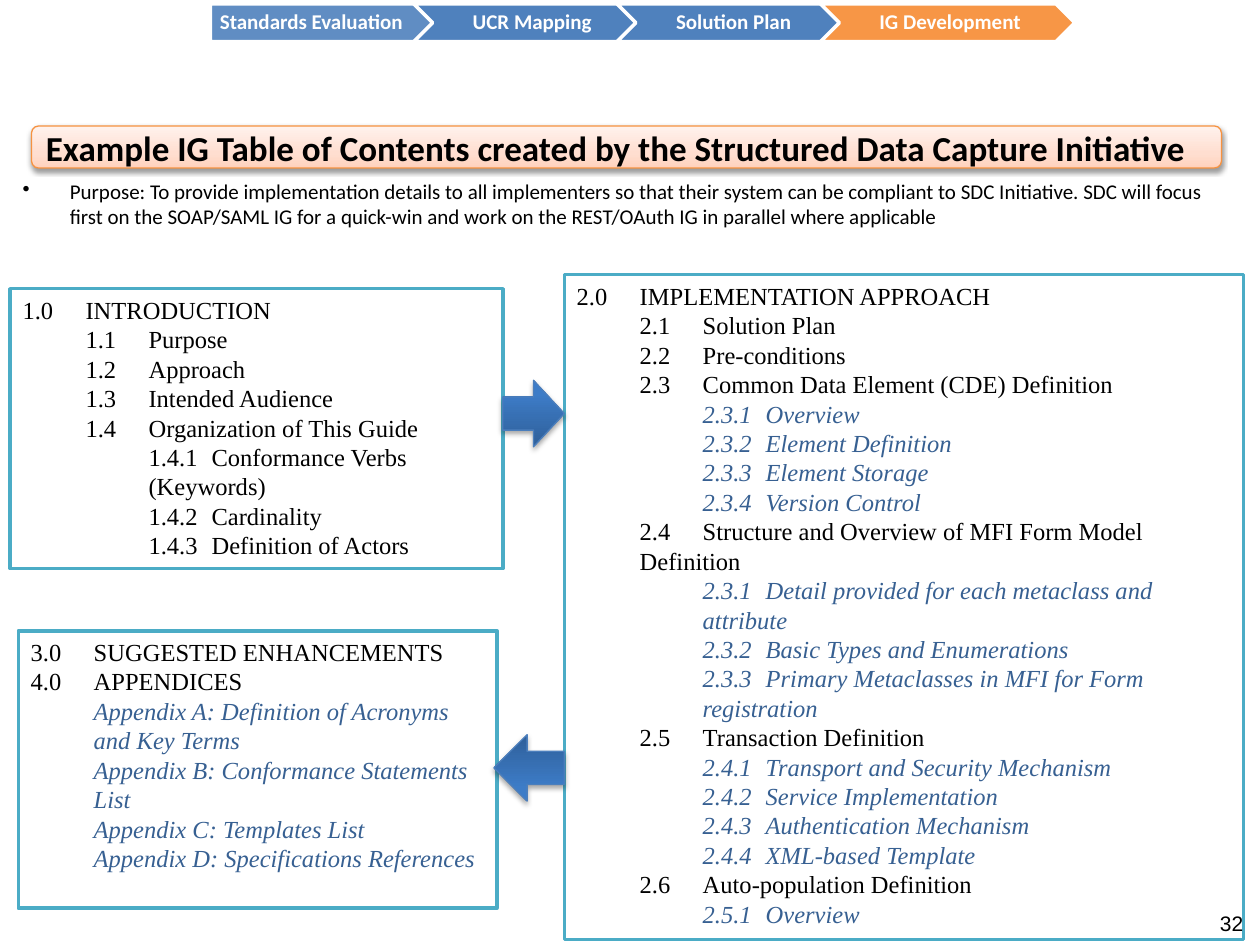
import pptx
import pptx.dml.color
import pptx.enum.shapes
import pptx.enum.text
import pptx.oxml
import pptx.oxml.ns
import pptx.util

Pt = pptx.util.Pt
SHAPES = pptx.enum.shapes.MSO_SHAPE
ANCHOR = pptx.enum.text.MSO_ANCHOR
COLORS = {
    "text": "000000", "light": "FFFFFF", "detail": "376092", "frame": "4BACC6",
    "step": "4F81BD", "current": "F79646", "banner_line": "F69240", "arrow_line": "4B7EBC",
}
GRADIENTS = {
    "banner": [(0, "FFD2BD"), (35, "FFDED0"), (100, "FFF2ED")],
    "arrow": [(0, "2F5F99"), (80, "3D7CC7"), (100, "3A7CCB")],
}
STEPS = ["Standards Evaluation", "UCR Mapping", "Solution Plan", "IG Development"]
INTRODUCTION = [
    (0, "1.0\tINTRODUCTION"), (1, "1.1\tPurpose"), (1, "1.2\tApproach"),
    (1, "1.3\tIntended Audience"), (1, "1.4\tOrganization of This Guide"),
    (2, "1.4.1\tConformance Verbs (Keywords)"), (2, "1.4.2\tCardinality"),
    (2, "1.4.3\tDefinition of Actors"),
]
IMPLEMENTATION = [
    (0, "2.0\tIMPLEMENTATION APPROACH"), (1, "2.1\tSolution Plan"), (1, "2.2\tPre-conditions"),
    (1, "2.3\tCommon Data Element (CDE) Definition"),
    (2, "2.3.1\tOverview"), (2, "2.3.2\tElement Definition"),
    (2, "2.3.3\tElement Storage"), (2, "2.3.4\tVersion Control"),
    (1, "2.4\tStructure and Overview of MFI Form Model Definition"),
    (2, "2.3.1\tDetail provided for each metaclass and attribute"),
    (2, "2.3.2\tBasic Types and Enumerations"),
    (2, "2.3.3\tPrimary Metaclasses in MFI for Form registration"),
    (1, "2.5\tTransaction Definition"),
    (2, "2.4.1\tTransport and Security Mechanism"), (2, "2.4.2\tService Implementation"),
    (2, "2.4.3\tAuthentication Mechanism"), (2, "2.4.4\tXML-based Template"),
    (1, "2.6\tAuto-population Definition"), (2, "2.5.1\tOverview"),
]
APPENDICES = [
    (0, "3.0\tSUGGESTED ENHANCEMENTS"), (0, "4.0\tAPPENDICES"),
    (1, "Appendix A: Definition of Acronyms and Key Terms"),
    (1, "Appendix B: Conformance Statements List"),
    (1, "Appendix C: Templates List"), (1, "Appendix D: Specifications References"),
]


def rgb(name):
    """Return the named palette colour."""
    return pptx.dml.color.RGBColor.from_string(COLORS[name])


def add_xml(parent, markup):
    """Append a DrawingML fragment to an element."""
    namespace = pptx.oxml.ns.nsdecls("a")
    parent.append(pptx.oxml.parse_xml(markup.replace(" ", f" {namespace} ", 1)))


def style_text(paragraph, face, size, color="text", bold=False, italic=False):
    """Set the look of a paragraph's only run."""
    font = paragraph.runs[0].font
    font.name, font.size, font.bold, font.italic = face, Pt(size), bold, italic
    font.color.rgb = rgb(color)


def add_outlined(slide, kind, box, fill, line, weight):
    """Add a flat preset shape with an outline."""
    outlined = slide.shapes.add_shape(kind, *map(Pt, box))
    outlined.shadow.inherit = False
    outlined.fill.solid()
    outlined.fill.fore_color.rgb = rgb(fill)
    outlined.line.color.rgb = rgb(line)
    outlined.line.width = Pt(weight)
    return outlined


def add_raised(slide, kind, box, gradient, line, opacity):
    """Add a preset shape with an upward gradient and a soft shadow."""
    raised = add_outlined(slide, kind, box, "light", line, 0.75)
    properties = raised.fill._xPr
    stops = "".join(
        f'<a:gs pos="{position * 1000}"><a:srgbClr val="{color}"/></a:gs>'
        for position, color in GRADIENTS[gradient])
    add_xml(properties, f'<a:gradFill rotWithShape="1"><a:gsLst>{stops}</a:gsLst>'
                        '<a:lin ang="16200000" scaled="0"/></a:gradFill>')
    solid = properties.find(pptx.oxml.ns.qn("a:solidFill"))
    properties.replace(solid, properties[-1])
    add_xml(properties.find(pptx.oxml.ns.qn("a:effectLst")),
            f'<a:outerShdw blurRad="{Pt(3.1)}" dist="{Pt(1.7)}" dir="5400000" rotWithShape="0">'
            f'<a:srgbClr val="000000"><a:alpha val="{opacity * 1000}"/></a:srgbClr></a:outerShdw>')
    return raised


def add_label(slide, box, text, face, size, color="text", bold=False):
    """Add a wrapping one-paragraph text box."""
    frame = slide.shapes.add_textbox(*map(Pt, box)).text_frame
    frame.word_wrap = True
    frame.text = text
    style_text(frame.paragraphs[0], face, size, color, bold)
    return frame


def add_progress(slide, box):
    """Draw the row of process steps with the last one highlighted."""
    left, top, width, height = box
    overlap = 29.2
    pitch = (width - overlap) / len(STEPS)
    for index, step in enumerate(STEPS):
        x = left + index * pitch
        first = index == 0
        fill = "current" if step == STEPS[-1] else "step"
        arrow = add_outlined(slide, SHAPES.PENTAGON if first else SHAPES.CHEVRON,
                             (x, top, pitch + overlap, height), fill, "light", 2)
        if first:
            color = arrow.fill._xPr.find(pptx.oxml.ns.qn("a:solidFill"))[0]
            add_xml(color, '<a:alpha val="90000"/>')
        label_box = (x, top, 131, height) if first else (x + overlap, top, 90, height)
        frame = add_label(slide, label_box, step, "Calibri", 12, "light", True)
        frame.vertical_anchor = ANCHOR.MIDDLE
        frame.margin_left, frame.margin_right = Pt(5.5 if first else 4.5), 0
        frame.margin_top = frame.margin_bottom = Pt(2.5)
        frame.paragraphs[0].line_spacing = 0.9


def add_banner(slide, box):
    """Draw the heading bar."""
    frame = add_raised(slide, SHAPES.ROUNDED_RECTANGLE, box, "banner", "banner_line", 38).text_frame
    frame.text = "Example IG Table of Contents created by the Structured Data Capture Initiative"
    frame.vertical_anchor = ANCHOR.MIDDLE
    frame.paragraphs[0].alignment = pptx.enum.text.PP_ALIGN.LEFT
    style_text(frame.paragraphs[0], "Calibri", 20, bold=True)


def add_purpose(slide, box):
    """Write the bulleted purpose statement."""
    frame = add_label(
        slide, box,
        "Purpose: To provide implementation details to all implementers so that their system can be "
        "compliant to SDC Initiative. SDC will focus first on the SOAP/SAML IG for a quick-win and "
        "work on the REST/OAuth IG in parallel where applicable", "Calibri", 12)
    properties = frame.paragraphs[0]._p.get_or_add_pPr()
    properties.set("marL", str(Pt(27)))
    properties.set("indent", str(Pt(-27)))
    add_xml(properties, '<a:buChar char="•"/>')


def add_contents(slide, box, entries, detail_level):
    """Draw a framed outline whose entries at the detail level are blue italics."""
    frame = add_outlined(slide, SHAPES.RECTANGLE, box, "light", "frame", 2).text_frame
    frame.word_wrap = True
    frame.vertical_anchor = ANCHOR.TOP
    frame.text = "\n".join(text for _, text in entries)
    for paragraph, (level, _) in zip(frame.paragraphs, entries):
        detail = level == detail_level
        paragraph.alignment = pptx.enum.text.PP_ALIGN.LEFT
        paragraph._p.get_or_add_pPr().set("marL", str(Pt(36 * level)))
        style_text(paragraph, "Times New Roman", 14, "detail" if detail else "text", italic=detail)


def add_flow_arrow(slide, box, rotation):
    """Draw a block arrow between two outlines."""
    add_raised(slide, SHAPES.RIGHT_ARROW, box, "arrow", "arrow_line", 35).rotation = rotation


def main():
    """Build the slide and save it."""
    presentation = pptx.Presentation()
    presentation.slide_width, presentation.slide_height = Pt(720), Pt(540)
    slide = presentation.slides.add_slide(presentation.slide_layouts[6])
    add_purpose(slide, (5.8, 98.6, 705, 60))
    add_contents(slide, (5.8, 165, 281.5, 160), INTRODUCTION, None)
    add_contents(slide, (322.5, 157, 388, 380), IMPLEMENTATION, 2)
    add_contents(slide, (10.5, 360.5, 273.5, 158.5), APPENDICES, 1)
    add_flow_arrow(slide, (287.3, 217.3, 35.2, 38), 0)
    add_flow_arrow(slide, (282.2, 419.8, 40.3, 38), 180)
    add_banner(slide, (18, 72, 680, 24))
    add_label(slide, (690, 517, 30, 23), "32", "Arial", 12)
    add_progress(slide, (120.2, 2.2, 494, 21.6))
    presentation.save("out.pptx")


if __name__ == "__main__":
    main()
